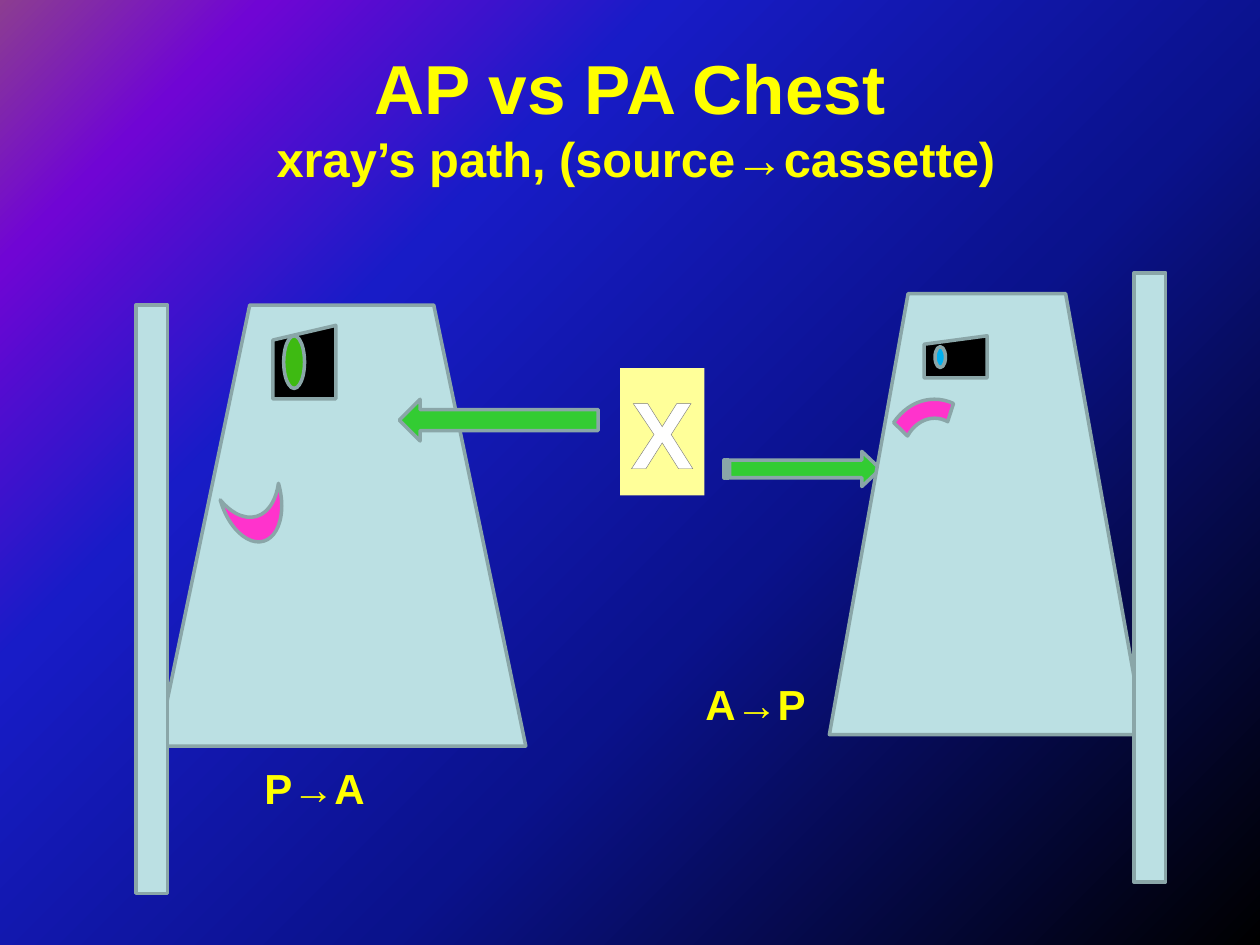
from lxml import etree
from pptx import Presentation
from pptx.dml.color import RGBColor
from pptx.enum import shapes, text
from pptx.oxml import parse_xml
from pptx.util import Cm, Pt

NS = "http://schemas.openxmlformats.org/drawingml/2006/main"
FONT = "Arial"
YELLOW = RGBColor(0xFF, 0xFF, 0x00)
PALE = RGBColor(0xBB, 0xE0, 0xE3)
EDGE = RGBColor(0x8A, 0xA6, 0xA8)
GREEN = RGBColor(0x33, 0xCC, 0x33)
PINK = RGBColor(0xFF, 0x33, 0xCC)
BLACK = RGBColor(0x00, 0x00, 0x00)
IRIS = RGBColor(0x3E, 0xBA, 0x12)
BLUE = RGBColor(0x00, 0xB0, 0xF0)
CREAM = RGBColor(0xFF, 0xFF, 0x99)

SKY = [(0, "000000"), (40, "0A128C"), (70, "181CC7"),
       (88, "7005D4"), (100, "8C3D91")]
STEEL = [(0, "FFFFFF"), (9, "FFFFFF"), (50, "7F7F7F"),
         (79, "FFFFFF"), (100, "FFFFFF")]

HEAD = ("AP vs PA Chest", 39.6)
SUB = [(" ", 24.3), ("xray’s path, (source→cassette)", 27.9)]

KIND = shapes.MSO_SHAPE
# kind, (left, top, width, height) in cm, fill, adjustments, rotation
PARTS = [
    (KIND.TRAPEZOID, (3.18, 6.15, 7.42, 8.89), PALE, (), 0),
    (KIND.RECTANGLE, (2.74, 6.15, 0.64, 11.86), PALE, (), 0),
    (KIND.STRIPED_RIGHT_ARROW, (14.6, 9.1, 3.15, 0.71), GREEN, (0.5, 0.53), 0),
    (KIND.LEFT_ARROW, (8.05, 8.05, 4.01, 0.84), GREEN, (), 0),
    (KIND.TRAPEZOID, (16.72, 5.92, 6.35, 8.89), PALE, (), 0),
    (KIND.RECTANGLE, (22.86, 5.5, 0.64, 12.28), PALE, (), 0),
    (KIND.FLOWCHART_MANUAL_INPUT, (5.5, 6.56, 1.27, 1.48), BLACK, (), 0),
    (KIND.FLOWCHART_MANUAL_INPUT, (18.63, 6.77, 1.27, 0.85), BLACK, (), 0),
    (KIND.FLOWCHART_CONNECTOR, (5.72, 6.77, 0.42, 1.06), IRIS, (), 0),
    (KIND.FLOWCHART_CONNECTOR, (18.85, 6.99, 0.21, 0.42), BLUE, (), 0),
    (KIND.MOON, (4.65, 9.8, 1.04, 1.22), PINK, (), 254),
    (KIND.BLOCK_ARC, (17.78, 8.05, 2.12, 2.54), PINK, (134.52, 172.74, 0.18), 0),
]
LABELS = [
    ("P→A", (5.08, 15.24, 3.38, 1.27)),
    ("A→P", (13.97, 13.55, 2.74, 1.27)),
]
SOURCE = ("X", (12.5, 7.42, 1.7, 2.57))


def cms(box):
    return [Cm(v) for v in box]


def blend(stops, way):
    """Gradient fill element; way is the XML that sets its direction."""
    marks = "".join(f'<a:gs pos="{at * 1000}"><a:srgbClr val="{tint}"/></a:gs>'
                    for at, tint in stops)
    return parse_xml(f'<a:gradFill xmlns:a="{NS}" rotWithShape="1">'
                     f'<a:gsLst>{marks}</a:gsLst>{way}</a:gradFill>')


def add_run(para, words, size, tint=YELLOW):
    run = para.add_run()
    run.text = words
    run.font.size = Pt(size)
    run.font.name = FONT
    run.font.bold = True
    if tint is not None:
        run.font.color.rgb = tint
    return run


def add_part(slide, kind, box, fill, adjust=(), turn=0):
    part = slide.shapes.add_shape(kind, *cms(box))
    part.shadow.inherit = False
    part.fill.solid()
    part.fill.fore_color.rgb = fill
    part.line.color.rgb = EDGE
    part.line.width = Pt(2)
    part.rotation = turn
    for i, value in enumerate(adjust):
        part.adjustments[i] = value
    return part


def add_title(slide):
    title = slide.shapes.title
    title.left, title.top, title.width, title.height = cms((1.27, 0.76, 22.86, 3.18))
    frame = title.text_frame
    frame.auto_size = text.MSO_AUTO_SIZE.NONE
    frame.vertical_anchor = text.MSO_ANCHOR.MIDDLE
    para = frame.paragraphs[0]
    para.alignment = text.PP_ALIGN.CENTER
    add_run(para, *HEAD)
    para.add_line_break()
    for words, size in SUB:
        add_run(para, words, size)


def add_source(slide):
    words, box = SOURCE
    card = add_part(slide, KIND.RECTANGLE, box, CREAM)
    card.line.fill.background()
    frame = card.text_frame
    frame.word_wrap = False
    frame.vertical_anchor = text.MSO_ANCHOR.TOP
    para = frame.paragraphs[0]
    para.alignment = text.PP_ALIGN.CENTER
    run = add_run(para, words, 54, None)
    props = run.font._element
    rim = etree.fromstring(f'<a:ln xmlns:a="{NS}" w="10541"><a:solidFill>'
                           '<a:srgbClr val="7D7D7D"/></a:solidFill></a:ln>')
    props.insert(0, rim)
    props.insert(1, blend(STEEL, '<a:lin ang="5400000"/>'))


def main():
    deck = Presentation()
    deck.slide_width, deck.slide_height = Cm(25.4), Cm(19.05)
    slide = deck.slides.add_slide(deck.slide_layouts[5])

    slide.background.fill.solid()
    back = slide.background._cSld.bg.bgPr
    back.replace(back[0], blend(SKY, '<a:path path="circle">'
                                '<a:fillToRect l="100000" t="100000"/></a:path>'))

    add_title(slide)
    for part in PARTS:
        add_part(slide, *part)
    for words, box in LABELS:
        frame = slide.shapes.add_textbox(*cms(box)).text_frame
        frame.word_wrap = True
        add_run(frame.paragraphs[0], words, 24)
    add_source(slide)
    deck.save("out.pptx")


if __name__ == "__main__":
    main()
